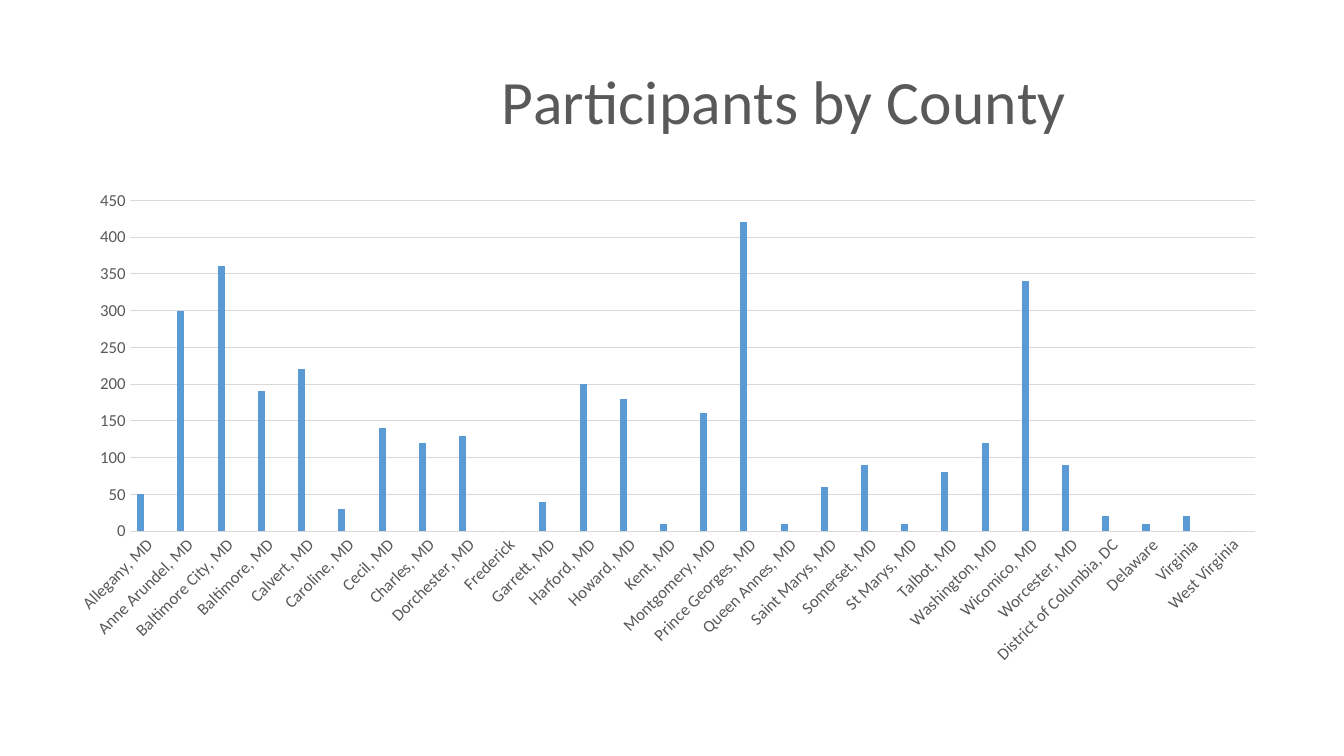
from lxml import etree
from pptx import Presentation
from pptx import util as u
from pptx.chart.data import CategoryChartData
from pptx.dml.color import RGBColor
from pptx.enum import chart as ch
from pptx.oxml.ns import qn

FONT = "Calibri"
TEXT_GREY = RGBColor(0x59, 0x59, 0x59)
LINE_GREY = RGBColor(0xD9, 0xD9, 0xD9)
SERIES_COLORS = [
    RGBColor(0x5B, 0x9B, 0xD5),
    RGBColor(0xED, 0x7D, 0x31),
    RGBColor(0xA5, 0xA5, 0xA5),
]
PARTICIPANTS = {
    "Allegany, MD": 50,
    "Anne Arundel, MD": 300,
    "Baltimore City, MD": 360,
    "Baltimore, MD": 190,
    "Calvert, MD": 220,
    "Caroline, MD": 30,
    "Cecil, MD": 140,
    "Charles, MD": 120,
    "Dorchester, MD": 130,
    "Frederick": 0,
    "Garrett, MD": 40,
    "Harford, MD": 200,
    "Howard, MD": 180,
    "Kent, MD": 10,
    "Montgomery, MD": 160,
    "Prince Georges, MD": 420,
    "Queen Annes, MD": 10,
    "Saint Marys, MD": 60,
    "Somerset, MD": 90,
    "St Marys, MD": 10,
    "Talbot, MD": 80,
    "Washington, MD": 120,
    "Wicomico, MD": 340,
    "Worcester, MD": 90,
    "District of Columbia, DC": 20,
    "Delaware": 10,
    "Virginia": 20,
    "West Virginia": 0,
}


def manual_layout(**settings):
    """Return a c:layout element holding the settings in schema order."""
    layout = etree.Element(qn("c:layout"))
    manual = etree.SubElement(layout, qn("c:manualLayout"))
    for name, value in settings.items():
        etree.SubElement(manual, qn(f"c:{name}")).set("val", str(value))
    return layout


def set_layout(element, layout, position):
    for old_layout in element.findall(qn("c:layout")):
        element.remove(old_layout)
    element.insert(position, layout)


def format_font(font, size):
    font.name = FONT
    font.size = u.Pt(size)
    font.bold = False
    font.color.rgb = TEXT_GREY


def format_line(line):
    line.color.rgb = LINE_GREY
    line.width = u.Pt(0.75)


def format_title(chart):
    chart.has_title = True
    title = chart.chart_title
    title.text_frame.text = "Participants by County"
    format_font(title.text_frame.paragraphs[0].runs[0].font, 44)
    layout = manual_layout(xMode="edge", yMode="edge", x=0.356, y=0)
    set_layout(title._element, layout, 1)


def format_axes(chart):
    categories, values = chart.category_axis, chart.value_axis
    for axis in (categories, values):
        axis.major_tick_mark = axis.minor_tick_mark = ch.XL_TICK_MARK.NONE
        format_font(axis.tick_labels.font, 12)
    format_line(categories.format.line)
    categories._element.find(qn("c:txPr")).find(qn("a:bodyPr")).set("rot", "-2700000")
    values.minimum_scale, values.maximum_scale, values.major_unit = 0, 450, 50
    values.format.line.fill.background()
    format_line(values.major_gridlines.format.line)


def add_county_chart(slide, left, top, width, height):
    data = CategoryChartData()
    data.categories = list(PARTICIPANTS)
    data.add_series("Series 1", list(PARTICIPANTS.values()))
    for name in ("Series 2", "Series 3"):
        data.add_series(name, [None] * len(PARTICIPANTS))
    chart = slide.shapes.add_chart(
        ch.XL_CHART_TYPE.COLUMN_CLUSTERED, left, top, width, height, data
    ).chart
    chart.has_legend = False
    chart.font.name = FONT
    chart.font.size = u.Pt(10)
    format_title(chart)
    format_axes(chart)

    plot = chart.plots[0]
    plot.gap_width, plot.overlap = 219, -27
    plot.vary_by_categories = False
    for series, color in zip(plot.series, SERIES_COLORS):
        series.format.fill.solid()
        series.format.fill.fore_color.rgb = color
    layout = manual_layout(
        layoutTarget="inner", xMode="edge", yMode="edge",
        x=0.062, y=0.243, w=0.918, h=0.525,
    )
    set_layout(chart._chartSpace.chart.plotArea, layout, 0)


def main():
    presentation = Presentation()
    presentation.slide_width, presentation.slide_height = u.Cm(33.87), u.Cm(19.05)
    slide = presentation.slides.add_slide(presentation.slide_layouts[6])
    add_county_chart(slide, u.Cm(1.35), u.Cm(1.19), u.Cm(30.91), u.Cm(15.88))
    presentation.save("out.pptx")


if __name__ == "__main__":
    main()
